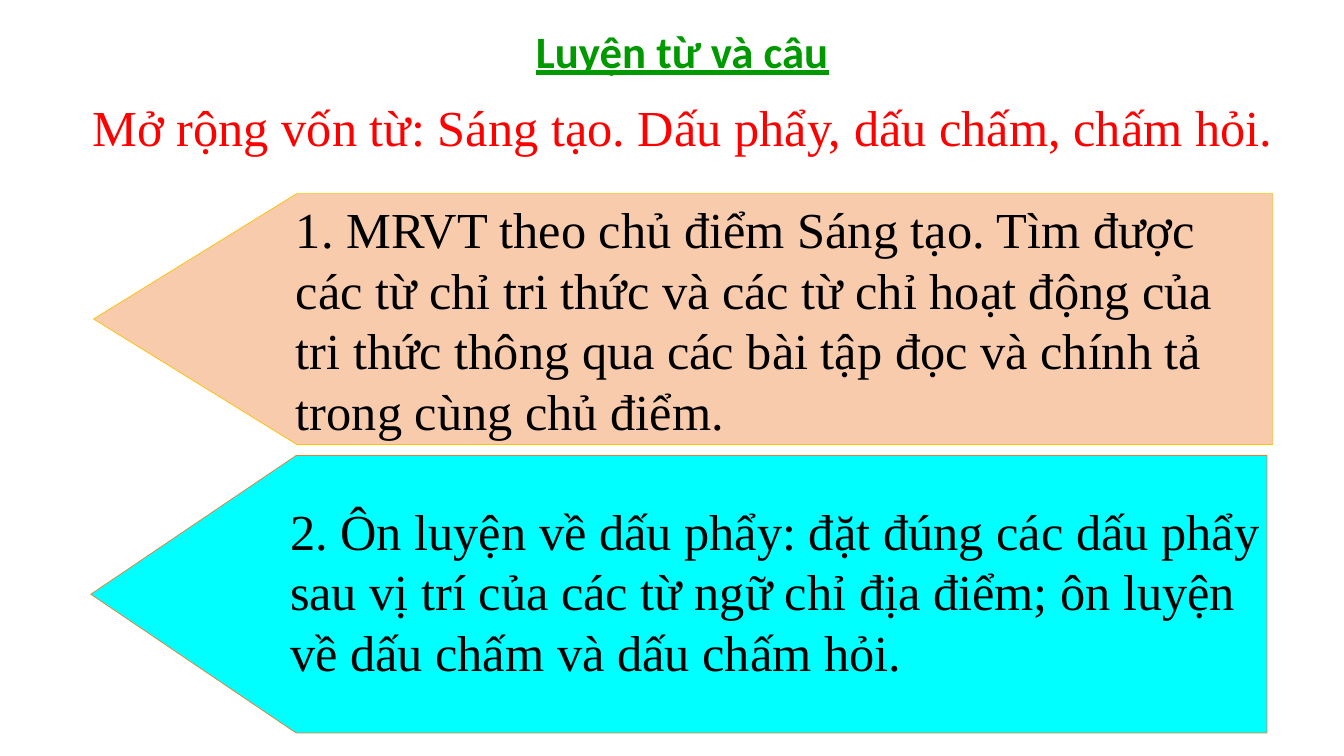
"""Build a Vietnamese grammar lesson slide with two arrow panels."""
from dataclasses import dataclass

from pptx import Presentation
from pptx.dml.color import RGBColor
from pptx.enum.shapes import MSO_SHAPE
from pptx.enum.text import MSO_ANCHOR, MSO_AUTO_SIZE, PP_ALIGN
from pptx.util import Cm, Pt

PENTAGON = MSO_SHAPE.PENTAGON
TOP = MSO_ANCHOR.TOP
NO_AUTO_SIZE = MSO_AUTO_SIZE.NONE
LEFT, CENTER = PP_ALIGN.LEFT, PP_ALIGN.CENTER
TITLE_ONLY = 5


@dataclass(frozen=True)
class Theme:
    title_font: str = "Calibri"
    body_font: str = "Times New Roman"
    title_size: int = 32
    body_size: int = 36
    line_width: float = 0.5
    title_color: str = "009900"
    topic_color: str = "FF0000"
    body_color: str = "000000"
    peach: str = "F8CBAD"
    gold: str = "FFC000"
    cyan: str = "00FFFF"
    orange: str = "ED7D31"


THEME = Theme()

GOALS = (
    {
        "text": "1. MRVT theo chủ điểm Sáng tạo. Tìm được các từ chỉ tri thức và các từ chỉ "
                "hoạt động của tri thức thông qua các bài tập đọc và chính tả trong cùng chủ điểm.",
        "text_box": (7.21, 4.88, 24.21, 6.4),
        "arrow_box": (2.36, 4.88, 29.72, 6.32),
        "point": 0.81, "fill": THEME.peach, "line": THEME.gold,
    },
    {
        "text": "2. Ôn luyện về dấu phẩy: đặt đúng các dấu phẩy sau vị trí của các từ ngữ chỉ "
                "địa điểm; ôn luyện về dấu chấm và dấu chấm hỏi.",
        "text_box": (7.06, 12.47, 25.07, 4.88),
        "arrow_box": (2.29, 11.48, 29.64, 6.99),
        "point": 0.74, "fill": THEME.cyan, "line": THEME.orange,
    },
)


def to_lengths(box):
    return [Cm(value) for value in box]


def write_text(shape, text, *, font=THEME.body_font, size=THEME.body_size,
               color=THEME.body_color, align=LEFT, bold=False, underline=False):
    frame = shape.text_frame
    frame.word_wrap = True
    frame.auto_size = NO_AUTO_SIZE
    frame.vertical_anchor = TOP
    paragraph = frame.paragraphs[0]
    paragraph.alignment = align
    run = paragraph.add_run()
    run.text = text
    run.font.name = font
    run.font.size = Pt(size)
    run.font.bold = bold
    run.font.underline = underline
    run.font.color.rgb = RGBColor.from_string(color)


def add_title(slide, text, box):
    title = slide.shapes.title
    title.left, title.top, title.width, title.height = to_lengths(box)
    write_text(title, text, font=THEME.title_font, size=THEME.title_size,
               color=THEME.title_color, align=CENTER, bold=True, underline=True)


def add_text(slide, text, box, **text_format):
    write_text(slide.shapes.add_textbox(*to_lengths(box)), text, **text_format)


def add_left_arrow(slide, box, point, fill, line):
    arrow = slide.shapes.add_shape(PENTAGON, *to_lengths(box))
    arrow.adjustments[0] = point
    arrow.element.spPr.xfrm.set("flipH", "1")
    arrow.shadow.inherit = False
    arrow.fill.solid()
    arrow.fill.fore_color.rgb = RGBColor.from_string(fill)
    arrow.line.color.rgb = RGBColor.from_string(line)
    arrow.line.width = Pt(THEME.line_width)


def add_goal(slide, goal):
    add_left_arrow(slide, goal["arrow_box"], goal["point"], goal["fill"], goal["line"])
    add_text(slide, goal["text"], goal["text_box"])


def main():
    presentation = Presentation()
    presentation.slide_width = Cm(33.87)
    presentation.slide_height = Cm(19.05)
    slide = presentation.slides.add_slide(presentation.slide_layouts[TITLE_ONLY])
    add_title(slide, "Luyện từ và câu", (4.85, 0.46, 24.69, 1.63))
    add_text(slide, "Mở rộng vốn từ: Sáng tạo. Dấu phẩy, dấu chấm, chấm hỏi.",
             (1.65, 2.29, 31.12, 1.8), color=THEME.topic_color, align=CENTER)
    for goal in GOALS:
        add_goal(slide, goal)
    presentation.save("out.pptx")


if __name__ == "__main__":
    main()
